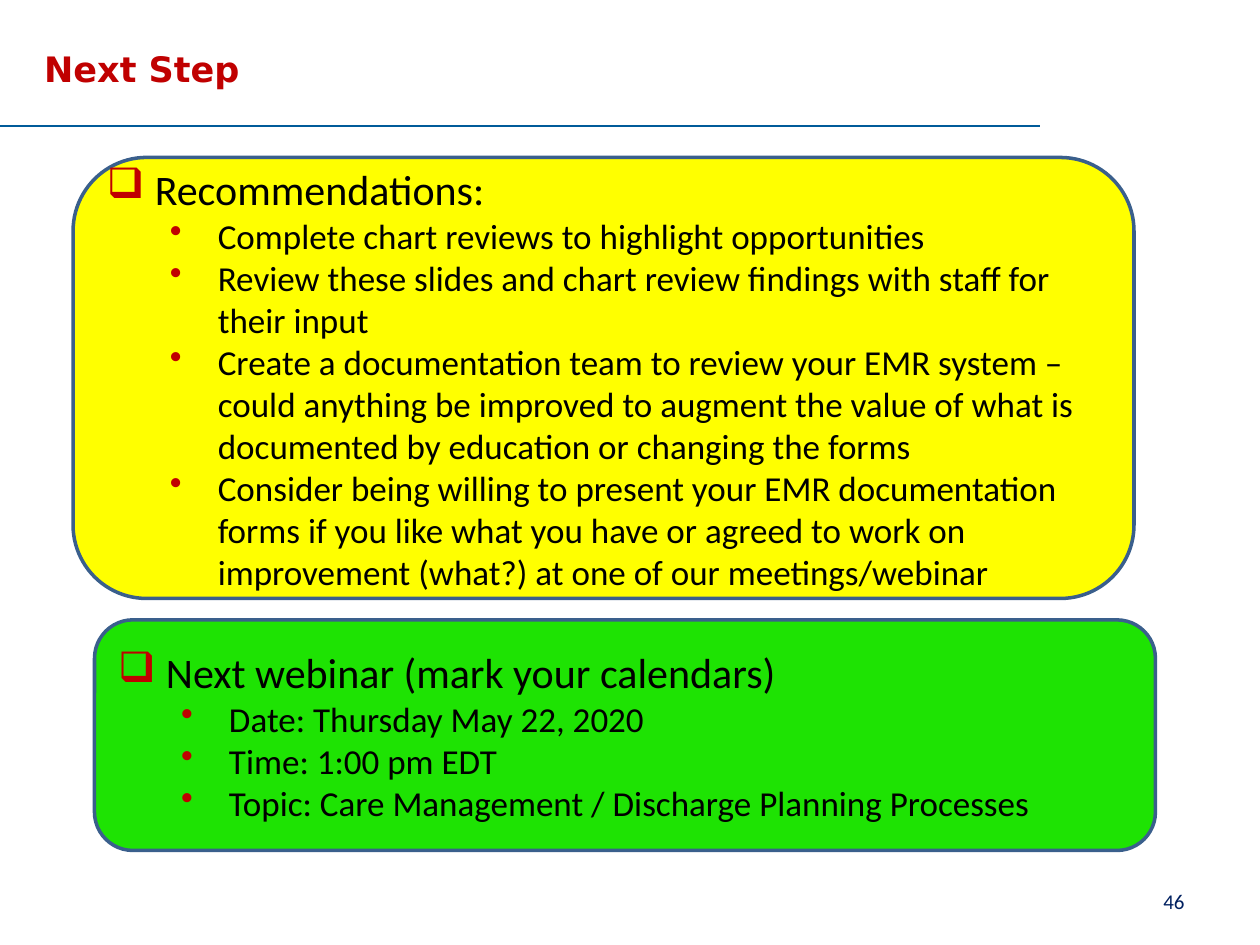
import pptx
import pptx.util
import pptx.dml.color
import pptx.enum.shapes
import pptx.enum.text
import pptx.oxml
import pptx.oxml.ns
from lxml import etree

Inches = pptx.util.Inches
Pt = pptx.util.Pt
ANCHOR = pptx.enum.text.MSO_ANCHOR
ALIGN = pptx.enum.text.PP_ALIGN

TITLE = "Next Step"
PAGE_NUMBER = "46"
RED = "C00000"
PANELS = [
    {
        "place": (0.58, 1.25, 8.42, 3.5),
        "fill": "FFFF00",
        "heading": "Recommendations:",
        "items": [
            "Complete chart reviews to highlight opportunities",
            "Review these slides and chart review findings with staff for their input",
            "Create a documentation team to review your EMR system – could anything be "
            "improved to augment the value of what is documented by education or changing the forms",
            "Consider being willing to present your EMR documentation forms if you like what you "
            "have or agreed to work on improvement (what?) at one of our meetings/webinar",
        ],
    },
    {
        "place": (0.75, 4.92, 8.42, 1.83),
        "fill": "1EE303",
        "heading": "Next webinar (mark your calendars)",
        "items": [
            "Date: Thursday May 22, 2020",
            "Time: 1:00 pm EDT",
            "Topic: Care Management / Discharge Planning Processes",
        ],
    },
]
# For each list level: bullet, text indent in inches, text size in points
LEVELS = [("❑", 0.38, 24), ("•", 0.88, 20)]
HANGING = 0.38


def color(value):
    return pptx.dml.color.RGBColor.from_string(value)


def format_text(para, size, font, value, bold=False):
    for span in para.runs:
        span.font.size = Pt(size)
        span.font.name = font
        span.font.bold = bold
        span.font.color.rgb = color(value)


def add_bullet(para, character, indent):
    """Give the paragraph a red bullet with a hanging indent."""
    properties = para._p.get_or_add_pPr()
    properties.set("marL", str(Inches(indent)))
    properties.set("indent", str(-Inches(HANGING)))
    tag = pptx.oxml.ns.qn
    bullet_color = etree.SubElement(properties, tag("a:buClr"))
    etree.SubElement(bullet_color, tag("a:srgbClr")).set("val", RED)
    etree.SubElement(properties, tag("a:buChar")).set("char", character)


def add_panel(slide, panel):
    box = slide.shapes.add_shape(
        pptx.enum.shapes.MSO_SHAPE.ROUNDED_RECTANGLE, *map(Inches, panel["place"]))
    box.shadow.inherit = False
    box.fill.solid()
    box.fill.fore_color.rgb = color(panel["fill"])
    box.line.color.rgb = color("3A5F8C")
    box.line.width = Pt(2)
    frame = box.text_frame
    frame.word_wrap = True
    frame.vertical_anchor = ANCHOR.MIDDLE
    frame.text = "\n".join([panel["heading"], *panel["items"]])
    for number, para in enumerate(frame.paragraphs):
        para.level = min(number, 1)
        para.alignment = ALIGN.LEFT
        bullet, indent, size = LEVELS[para.level]
        add_bullet(para, bullet, indent)
        format_text(para, size, "Calibri", "000000")


def add_title(slide):
    title = slide.shapes.title
    title.left, title.top, title.width, title.height = map(Inches, (0.25, 0.33, 9.5, 0.42))
    title.text_frame.text = TITLE
    title.text_frame.vertical_anchor = ANCHOR.MIDDLE
    para = title.text_frame.paragraphs[0]
    para.alignment = ALIGN.LEFT
    format_text(para, 20, "DejaVu Sans", RED, bold=True)


def add_rule(slide):
    rule = slide.shapes.add_connector(
        pptx.enum.shapes.MSO_CONNECTOR.STRAIGHT, *map(Inches, (0, 1, 8.25, 1)))
    rule.line.color.rgb = color("005B99")
    rule.line.width = Pt(0.75)
    etree.SubElement(rule._element.spPr, pptx.oxml.ns.qn("a:effectLst"))


def add_page_number(slide):
    box = slide.shapes.add_textbox(*map(Inches, (7.17, 6.95, 2.33, 0.4)))
    frame = box.text_frame
    frame.word_wrap = True
    frame.vertical_anchor = ANCHOR.MIDDLE
    frame.text = PAGE_NUMBER
    frame.paragraphs[0].alignment = ALIGN.RIGHT
    format_text(frame.paragraphs[0], 12, "Calibri", "002060")


def main():
    deck = pptx.Presentation()
    deck.slide_width, deck.slide_height = Inches(10), Inches(7.5)
    slide = deck.slides.add_slide(deck.slide_layouts.get_by_name("Title Only"))
    add_rule(slide)
    add_page_number(slide)
    add_title(slide)
    for panel in PANELS:
        add_panel(slide, panel)
    deck.save("out.pptx")


if __name__ == "__main__":
    main()
